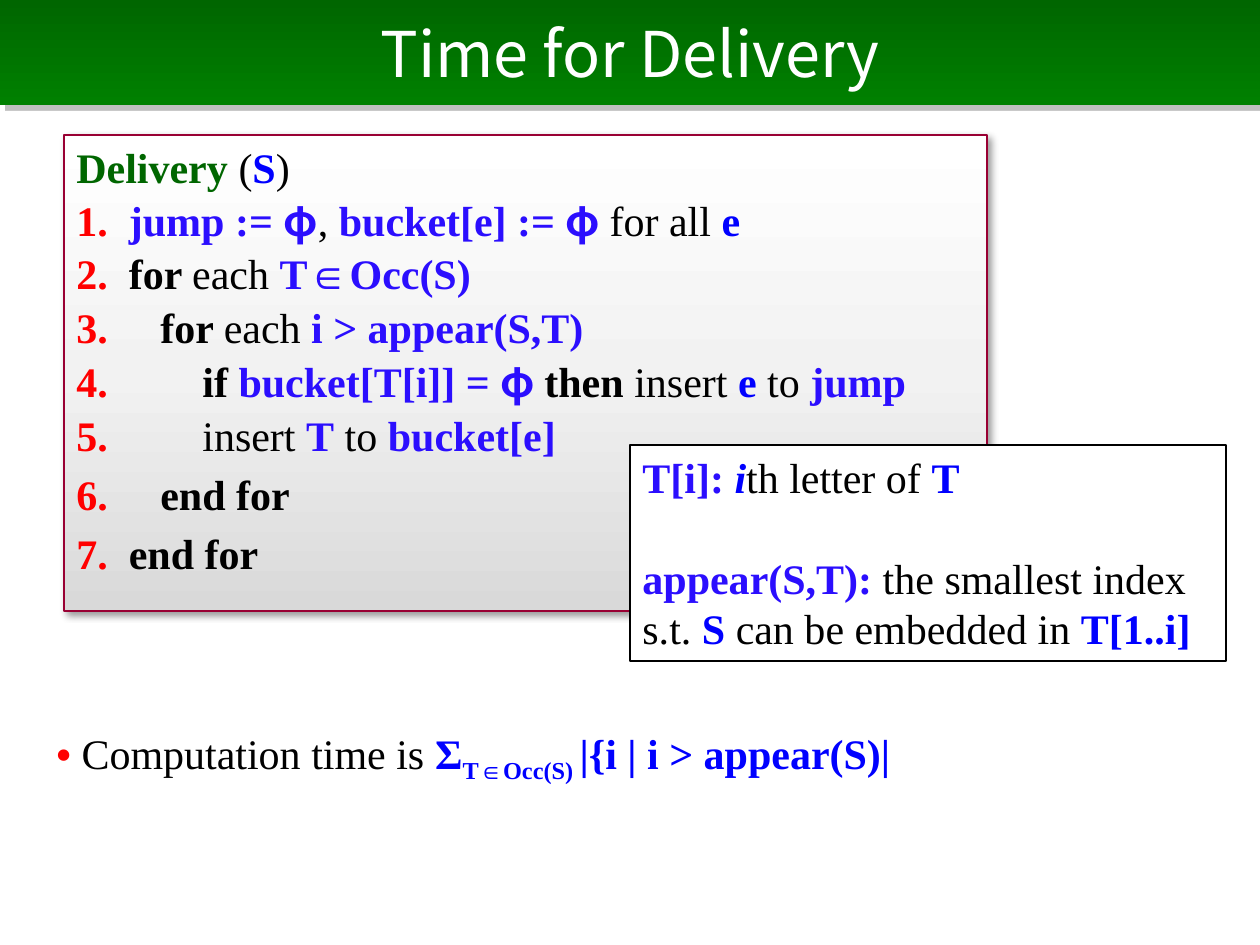
from lxml import etree
from pptx import Presentation
from pptx.dml.color import RGBColor
from pptx.enum import shapes, text
from pptx.oxml import ns
from pptx.util import Emu, Pt

SCALE = 914400 / 126  # EMU per px
SERIF, SANS = "Times New Roman", "Noto Sans CJK JP"
COLORS = {
    "white": "FFFFFF", "black": "000000", "red": "FF0000", "green": "006600",
    "bright green": "008000", "blue": "0000FF", "violet": "2B0EFE",
    "crimson": "990033", "gray": "808080", "pale": "F2F2F2", "silver": "D9D9D9",
}
# style: colour, bold, font
STYLES = {
    "plain": ("black", False, SERIF), "key": ("black", True, SERIF),
    "num": ("red", True, SERIF), "name": ("green", True, SERIF),
    "var": ("blue", True, SERIF), "code": ("violet", True, SERIF),
    "phi": ("violet", True, SANS),
    "ital": ("blue", True, SERIF), "sub": ("blue", True, SERIF),
}
HEADING = [("name", "Delivery "), ("plain", "("), ("var", "S"), ("plain", ")")]
STEPS = [
    [("num", "1.  "), ("code", "jump := "), ("phi", "φ"), ("plain", ", "),
     ("code", "bucket[e] := "), ("phi", "φ "), ("plain", "for all "), ("var", "e")],
    [("num", "2.  "), ("key", "for "), ("plain", "each "), ("code", "T∈Occ(S)")],
    [("num", "3."), ("key", "     for "), ("plain", "each "),
     ("code", "i > appear(S,T)")],
    [("num", "4.         "), ("key", "if "), ("code", "bucket[T[i]] = "),
     ("phi", "φ "), ("key", "then "), ("plain", "insert "), ("var", "e"),
     ("plain", " to "), ("code", "jump")],
    [("num", "5.         "), ("plain", "insert "), ("code", "T"),
     ("plain", " to "), ("code", "bucket[e]")],
    [("num", "6.     "), ("key", "end for")],
    [("num", "7."), ("key", "  end for")],
]
NOTES = [
    [("code", "T[i]: "), ("ital", "i"), ("plain", "th letter of "), ("var", "T")],
    [("code", "appear(S,T): "), ("plain", "the smallest index")],
    [("plain", "s.t. "), ("var", "S"), ("plain", " can be embedded in "),
     ("var", "T[1..i]")],
]
COST = [("num", "• "), ("plain", "Computation time is "), ("var", "Σ"),
        ("sub", "T∈Occ(S) "), ("var", "|{i | i > appear(S)|")]


def px(*lengths):
    return [Emu(round(length * SCALE)) for length in lengths]


def color(name):
    return RGBColor.from_string(COLORS[name])


def add_effects(shape, stops, shadow):
    """Give the shape a downward gradient and an outer shadow."""
    tone, alpha, blur, distance = shadow
    marks = "".join(
        f'<a:gs pos="{pos * 1000}"><a:srgbClr val="{COLORS[name]}"/></a:gs>'
        for pos, name in stops)
    gradient = etree.fromstring(
        f'<a:gradFill {ns.nsdecls("a")} rotWithShape="1"><a:gsLst>{marks}</a:gsLst>'
        '<a:lin ang="5400000" scaled="0"/></a:gradFill>')
    shape.fill.solid()
    solid = shape._element.spPr.find(ns.qn("a:solidFill"))
    solid.getparent().replace(solid, gradient)
    shape.shadow.inherit = False
    effects = shape._element.spPr.find(ns.qn("a:effectLst"))
    effects.append(etree.fromstring(
        f'<a:outerShdw {ns.nsdecls("a")} blurRad="{Pt(blur)}" dist="{Pt(distance)}" '
        'dir="2700000" algn="tl" rotWithShape="0">'
        f'<a:srgbClr val="{COLORS[tone]}"><a:alpha val="{alpha * 1000}"/></a:srgbClr>'
        '</a:outerShdw>'))


def write(frame, lines):
    """Fill the frame with one paragraph for each line of styled spans."""
    frame.vertical_anchor = text.MSO_ANCHOR.TOP
    for index, line in enumerate(lines):
        para = frame.paragraphs[0] if index == 0 else frame.add_paragraph()
        para.alignment = text.PP_ALIGN.LEFT
        for style, words in line:
            span = para.add_run()
            span.text = words
            tone, bold, face = STYLES[style]
            span.font.name, span.font.size, span.font.bold = face, Pt(24), bold
            span.font.color.rgb = color(tone)
            if style == "ital":
                span.font.italic = True
            if style == "sub":
                span._r.get_or_add_rPr().set("baseline", "-25000")
    return frame.paragraphs


def add_rectangle(page, box, line_color, line_width):
    shape = page.shapes.add_shape(shapes.MSO_SHAPE.RECTANGLE, *px(*box))
    shape.line.color.rgb = color(line_color)
    shape.line.width = Pt(line_width)
    return shape


def title_bar(page, box):
    title = page.shapes.title
    title.left, title.top, title.width, title.height = px(*box)
    add_effects(title, [(0, "green"), (100, "bright green")], ("gray", 50, 0, 4.2))
    frame = title.text_frame
    frame.text = "Time for Delivery"
    frame.vertical_anchor = text.MSO_ANCHOR.MIDDLE
    para = frame.paragraphs[0]
    para.alignment = text.PP_ALIGN.CENTER
    font = para.runs[0].font
    font.name, font.size = SANS, Pt(36)
    font.color.rgb = color("white")


def algorithm_panel(page, box):
    panel = add_rectangle(page, box, "crimson", 1.5)
    add_effects(panel, [(0, "white"), (50, "pale"), (100, "silver")],
                ("black", 40, 4, 3))
    paras = write(panel.text_frame, [HEADING] + STEPS)
    for para in paras[1:]:
        para.space_before = Pt(4.8)
    for para in paras[1:6]:
        para.line_spacing = 0.9


def notes_box(page, box):
    notes = add_rectangle(page, box, "black", 0.75)
    notes.fill.solid()
    notes.fill.fore_color.rgb = color("white")
    notes.shadow.inherit = False
    frame = notes.text_frame
    frame.word_wrap = False
    frame.auto_size = text.MSO_AUTO_SIZE.SHAPE_TO_FIT_TEXT
    paras = write(frame, NOTES)
    paras[1].space_before = Pt(29)


def cost_line(page, box):
    frame = page.shapes.add_textbox(*px(*box)).text_frame
    frame.word_wrap = True
    write(frame, [COST])


def main():
    deck = Presentation()
    deck.slide_width, deck.slide_height = px(1260, 945)
    page = deck.slides.add_slide(deck.slide_layouts[5])
    title_bar(page, (0, 0, 1260, 105))
    cost_line(page, (44, 721, 1147, 118))
    algorithm_panel(page, (64, 135, 923, 476))
    notes_box(page, (630, 445, 596, 216))
    deck.save("out.pptx")


if __name__ == "__main__":
    main()
